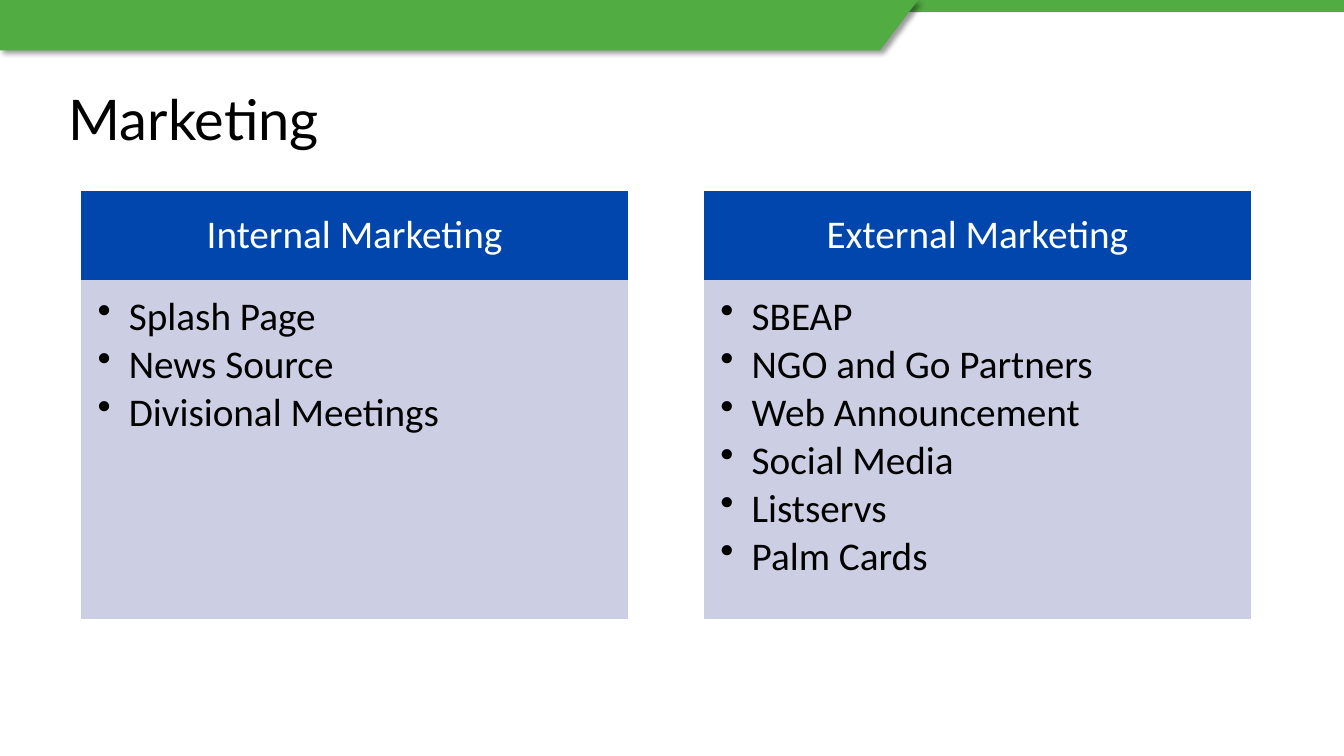
from lxml.etree import SubElement
from pptx import Presentation
from pptx.dml.color import RGBColor
from pptx.enum.shapes import MSO_SHAPE
from pptx.enum.text import MSO_ANCHOR, PP_ALIGN
from pptx.oxml.ns import qn
from pptx.util import Inches, Pt

COLS, ROWS = 32, 18
GREEN, BLUE, PALE = "51AC42", "0046AD", "CCCFE3"
BLACK, WHITE = "000000", "FFFFFF"


def color(code):
    return RGBColor.from_string(code)


def write(frame, text, font="Calibri", size=28, ink=BLACK, align=PP_ALIGN.LEFT,
          anchor=MSO_ANCHOR.TOP, pads=(0.1, 0.05, 0.1, 0.05), after=0, bullet=False):
    """Fill a text frame, one paragraph per line of text."""
    frame.word_wrap = True
    frame.vertical_anchor = anchor
    (frame.margin_left, frame.margin_top,
     frame.margin_right, frame.margin_bottom) = map(Inches, pads)
    for i, line in enumerate(text.split("\n")):
        para = frame.add_paragraph() if i else frame.paragraphs[0]
        para.alignment, para.line_spacing, para.space_after = align, 0.9, Pt(after)
        if bullet:
            props = para._p.get_or_add_pPr()
            props.set("marL", str(Inches(0.31)))
            props.set("indent", str(-Inches(0.31)))
            SubElement(props, qn("a:buChar"), char="•")
        run = para.add_run()
        run.text = line
        run.font.name, run.font.size = font, Pt(size)
        run.font.color.rgb = color(ink)


class Page:
    """A slide measured in grid columns and rows."""

    def __init__(self, deck):
        self.slide = deck.slides.add_slide(deck.slide_layouts[6])
        self.shapes = self.slide.shapes
        self.col = deck.slide_width / COLS
        self.row = deck.slide_height / ROWS

    def place(self, x, y, w, h):
        return (round(x * self.col), round(y * self.row),
                round(w * self.col), round(h * self.row))

    def paint(self, shape, fill, edge):
        shape.shadow.inherit = False
        shape.fill.solid()
        shape.fill.fore_color.rgb = color(fill)
        if edge:
            shape.line.color.rgb = color(fill)
            shape.line.width = Pt(1)
        else:
            shape.line.fill.background()
        return shape

    def box(self, x, y, w, h, fill, edge=False):
        shape = self.shapes.add_shape(MSO_SHAPE.RECTANGLE, *self.place(x, y, w, h))
        return self.paint(shape, fill, edge)

    def flag(self, points, fill):
        spots = [self.place(x, y, 0, 0)[:2] for x, y in points]
        pen = self.shapes.build_freeform(*spots[0])
        pen.add_line_segments(spots[1:], close=True)
        shape = self.paint(pen.convert_to_shape(), fill, False)
        # Soft shadow, down and to the right
        effects = shape._element.spPr.find(qn("a:effectLst"))
        outer = SubElement(effects, qn("a:outerShdw"), blurRad=str(Pt(4)),
                           dist=str(Pt(3)), dir="2700000", algn="tl", rotWithShape="0")
        tint = SubElement(outer, qn("a:srgbClr"), val=BLACK)
        SubElement(tint, qn("a:alpha"), val="40000")

    def label(self, x, y, w, h, text, **style):
        write(self.shapes.add_textbox(*self.place(x, y, w, h)).text_frame, text, **style)

    def card(self, x, y, w, head, body, title, items):
        top = self.box(x, y, w, head, BLUE, edge=True)
        write(top.text_frame, title, ink=WHITE, align=PP_ALIGN.CENTER,
              anchor=MSO_ANCHOR.MIDDLE, pads=(0.22, 0.12, 0.22, 0.12))
        panel = self.box(x, y + head, w, body, PALE, edge=True)
        write(panel.text_frame, "\n".join(items), pads=(0.16, 0.16, 0.22, 0.24),
              after=4, bullet=True)


def main():
    deck = Presentation()
    deck.slide_width, deck.slide_height = Inches(13.33), Inches(7.5)
    page = Page(deck)

    # Green band across the top
    page.box(0, 0, COLS, 0.29, GREEN)
    page.flag([(0, 0), (21.86, 0), (20.95, 1.2), (0, 1.2)], GREEN)

    # Title
    page.label(1.4, 2, 28.36, 1.85, "Marketing", font="Lato", size=40,
               anchor=MSO_ANCHOR.MIDDLE)

    # Two cards side by side
    cards = {
        "Internal Marketing": ["Splash Page", "News Source", "Divisional Meetings"],
        "External Marketing": ["SBEAP", "NGO and Go Partners", "Web Announcement",
                               "Social Media", "Listservs", "Palm Cards"],
    }
    wide, gap = 13, 1.83
    for i, (title, items) in enumerate(cards.items()):
        page.card(1.94 + i * (wide + gap), 4.56, wide, 2.12, 8.04, title, items)

    deck.save("out.pptx")


if __name__ == "__main__":
    main()
